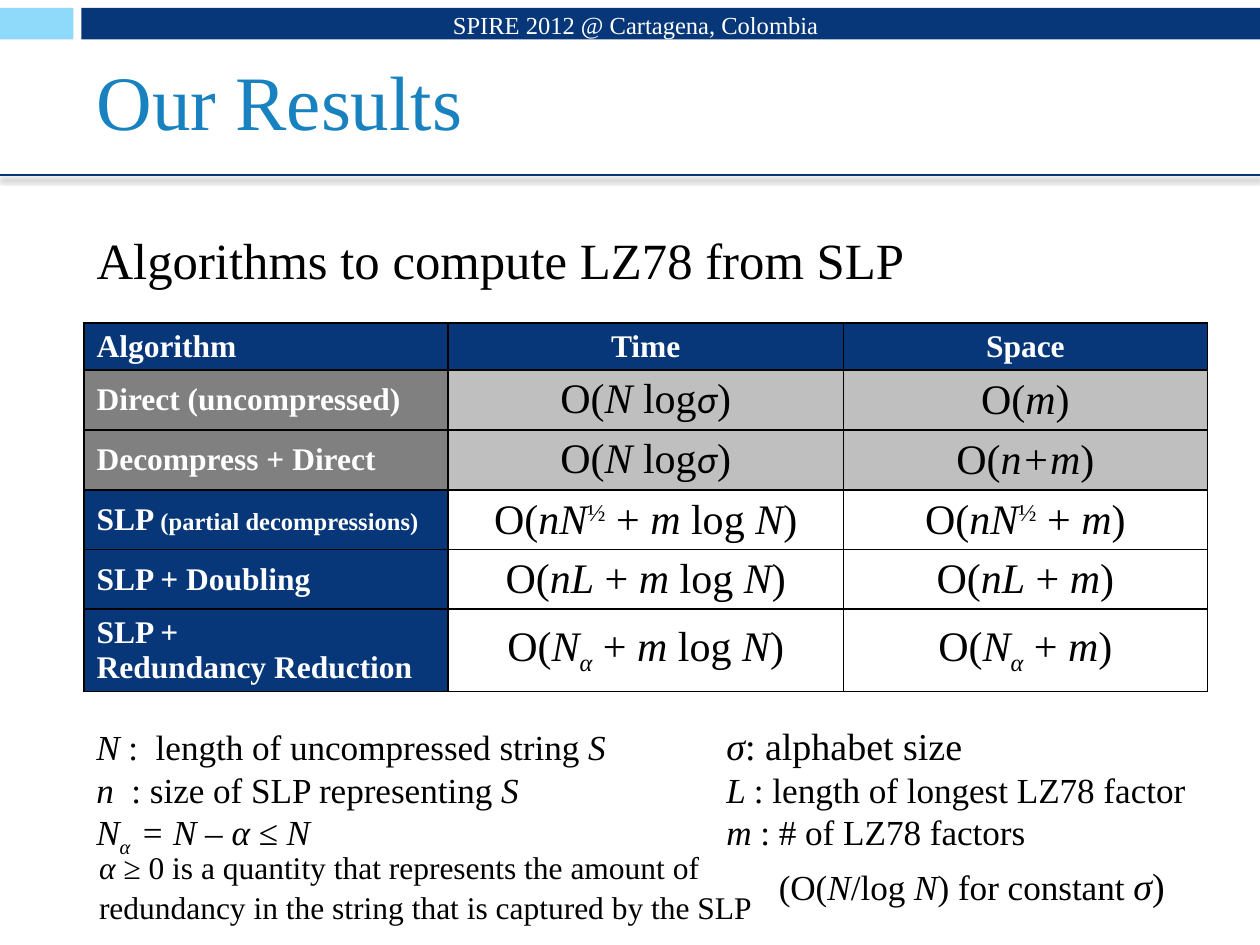
from lxml import etree
from pptx import Presentation
from pptx.dml.color import RGBColor
from pptx.enum.shapes import MSO_CONNECTOR, MSO_SHAPE
from pptx.enum.text import MSO_ANCHOR, MSO_AUTO_SIZE, PP_ALIGN
from pptx.oxml.ns import qn
from pptx.util import Pt

RECTANGLE = MSO_SHAPE.RECTANGLE
STRAIGHT = MSO_CONNECTOR.STRAIGHT
LEFT, CENTER, RIGHT = PP_ALIGN.LEFT, PP_ALIGN.CENTER, PP_ALIGN.RIGHT
TOP, MIDDLE = MSO_ANCHOR.TOP, MSO_ANCHOR.MIDDLE
NO_AUTOFIT = MSO_AUTO_SIZE.NONE

NAVY, SKY, BLUE = "073779", "8FD9FB", "1782BF"
GRAY, SILVER, WHITE, BLACK = "808080", "BFBFBF", "FFFFFF", "000000"


def color(value):
    return RGBColor.from_string(value)


def child(parent, tag, **attributes):
    values = {name: str(value) for name, value in attributes.items()}
    return etree.SubElement(parent, qn(tag), values)


def italic(text, **style):
    return text, dict(italic=True, **style)


def sub(text):
    return italic(text, baseline=-25000)


def sup(text):
    return text, dict(baseline=30000)


class ResultsSlide:
    font = "Times New Roman"

    def __init__(self, slide):
        self.slide = slide

    def add_piece(self, paragraph, text, size, ink, bold=False, italic=False,
                  font=None, baseline=None):
        if text == "\n":
            paragraph.add_line_break()
            return
        run = paragraph.add_run()
        run.text = text
        run.font.name = font or self.font
        run.font.size = Pt(size)
        run.font.bold = bold
        run.font.italic = italic
        run.font.color.rgb = color(ink)
        if baseline:
            run.font._element.set("baseline", str(baseline))

    def add_pieces(self, paragraph, pieces, align=LEFT, **base):
        paragraph.alignment = align
        for piece in pieces:
            text, style = (piece, {}) if isinstance(piece, str) else piece
            self.add_piece(paragraph, text, **{**base, **style})

    def frame(self, shape, anchor):
        frame = shape.text_frame
        frame.word_wrap = True
        frame.auto_size = NO_AUTOFIT
        frame.vertical_anchor = anchor
        return frame

    def placeholder(self, index, box, text, size, ink, anchor):
        shape = self.slide.placeholders[index]
        shape.left, shape.top, shape.width, shape.height = map(Pt, box)
        paragraph = self.frame(shape, anchor).paragraphs[0]
        self.add_pieces(paragraph, [text], size=size, ink=ink)
        paragraph.space_before = Pt(7)
        properties = paragraph._p.get_or_add_pPr()
        properties.set("marL", "0")
        properties.set("indent", "0")
        child(properties, "a:buNone")

    def text(self, box, lines, anchor=TOP, tabs=(), spacing=None, **style):
        frame = self.frame(self.slide.shapes.add_textbox(*map(Pt, box)), anchor)
        for number, pieces in enumerate(lines):
            paragraph = frame.add_paragraph() if number else frame.paragraphs[0]
            self.add_pieces(paragraph, pieces, **style)
            if spacing:
                paragraph.line_spacing = spacing
            if tabs:
                stops = child(paragraph._p.get_or_add_pPr(), "a:tabLst")
                for tab in tabs:
                    child(stops, "a:tab", pos=int(Pt(tab)), algn="l")
        return frame

    def bar(self, box, fill):
        shape = self.slide.shapes.add_shape(RECTANGLE, *map(Pt, box))
        shape.shadow.inherit = False
        shape.fill.solid()
        shape.fill.fore_color.rgb = color(fill)
        shape.line.fill.background()

    def rule(self, y, width):
        line = self.slide.shapes.add_connector(STRAIGHT, 0, Pt(y), Pt(width), Pt(y))
        line.line.color.rgb = color(NAVY)
        line.line.width = Pt(1.5)
        effects = child(line._element.spPr, "a:effectLst")
        shadow = child(effects, "a:outerShdw", blurRad=int(Pt(3)), dist=int(Pt(2.4)),
                       dir=90 * 60000, algn="t", rotWithShape=0)
        child(child(shadow, "a:srgbClr", val=BLACK), "a:alpha", val=45000)

    def cell(self, cell, pieces, fill, **style):
        cell.vertical_anchor = MIDDLE
        cell.margin_top = cell.margin_bottom = Pt(3)
        self.add_pieces(cell.text_frame.paragraphs[0], pieces, **style)
        for side in ("a:lnL", "a:lnR", "a:lnT", "a:lnB"):
            border = child(cell._tc.get_or_add_tcPr(), side, w=int(Pt(1)))
            child(child(border, "a:solidFill"), "a:srgbClr", val=BLACK)
        if fill:
            cell.fill.solid()
            cell.fill.fore_color.rgb = color(fill)
        else:
            cell.fill.background()

    def table(self, left, top, widths, heights, headings, rows):
        table = self.slide.shapes.add_table(
            len(heights), len(widths), Pt(left), Pt(top),
            Pt(sum(widths)), Pt(sum(heights))).table
        for column, width in zip(table.columns, widths):
            column.width = Pt(width)
        for row, height in zip(table.rows, heights):
            row.height = Pt(height)
        label = dict(size=18, ink=WHITE, bold=True)
        for column, heading in enumerate(headings):
            self.cell(table.cell(0, column), [heading], NAVY,
                      align=CENTER if column else LEFT, **label)
        for number, (fills, name, *bounds) in enumerate(rows, 1):
            self.cell(table.cell(number, 0), name, fills[0], **label)
            for column, bound in enumerate(bounds, 1):
                self.cell(table.cell(number, column), bound, fills[1],
                          align=CENTER, size=24, ink=BLACK)


def main():
    deck = Presentation()
    deck.slide_width, deck.slide_height = Pt(720), Pt(540)
    page = ResultsSlide(deck.slides.add_slide(deck.slide_layouts[1]))

    page.bar((0, 4.5, 42, 18), SKY)
    page.bar((46.5, 4.5, 673.5, 18), NAVY)
    page.rule(100, 720)
    page.placeholder(0, (48, 18, 642, 78), "Our Results", 44, BLUE, MIDDLE)
    page.text((48, -0.5, 427, 29), [["SPIRE 2012 @ Cartagena, Colombia"]],
              anchor=MIDDLE, align=RIGHT, size=14, ink=WHITE)
    page.placeholder(1, (48, 127, 642, 52),
                     "Algorithms to compute LZ78 from SLP", 29, BLACK, TOP)

    known, ours = (GRAY, SILVER), (NAVY, None)
    sigma = italic("σ", size=22, font="Calibri")
    n_log_sigma = ["O(", italic("N "), "log", sigma, ")"]
    plus_m = [" + ", italic("m")]
    m_log_n = [*plus_m, " log ", italic("N"), ")"]
    root = [italic("nN"), sup("½")]
    doubling = [italic("nL")]
    reduced = [italic("N"), sub("α")]
    page.table(48, 184.5, (208, 226, 208), (27, 34.3, 34.3, 34, 34, 47),
               ("Algorithm", "Time", "Space"), [
        (known, ["Direct (uncompressed)"], n_log_sigma, ["O(", italic("m"), ")"]),
        (known, ["Decompress + Direct"], n_log_sigma, ["O(", italic("n+m"), ")"]),
        (ours, ["SLP ", ("(partial decompressions)", dict(size=14))],
         ["O(", *root, *m_log_n], ["O(", *root, *plus_m, ")"]),
        (ours, ["SLP + Doubling"],
         ["O(", *doubling, *m_log_n], ["O(", *doubling, *plus_m, ")"]),
        (ours, ["SLP + ", "\n", "Redundancy Reduction"],
         ["O(", *reduced, *m_log_n], ["O(", *reduced, *plus_m, ")"]),
    ])

    large = dict(size=21.7)
    legend = page.text((48, 409.5, 642, 111), [
        [italic("N "), ":  length of uncompressed string ", italic("S\t"),
         italic("σ", **large), (": alphabet size", large)],
        [italic("n  "), ": size of SLP representing ", italic("S\tL "),
         ": length of longest LZ78 factor"],
        [italic("N"), sub("α  "), italic("= N"), " – ", italic("α ≤ N\tm"),
         " : # of LZ78 factors"],
        ["\t\t(O(", italic("N"), "/log ", italic("N"), ") for constant ",
         italic("σ", **large), (")", large)],
    ], tabs=(360, 390), size=20.1, ink=BLACK)
    legend.paragraphs[-1].space_before = Pt(2)
    page.text((49.5, 480, 400, 51), [
        [italic("α ≥ "), "0 is a quantity that represents the amount of "
         "redundancy in the string that is captured by the SLP"],
    ], spacing=1.05, size=18, ink=BLACK)

    deck.save("out.pptx")


if __name__ == "__main__":
    main()
